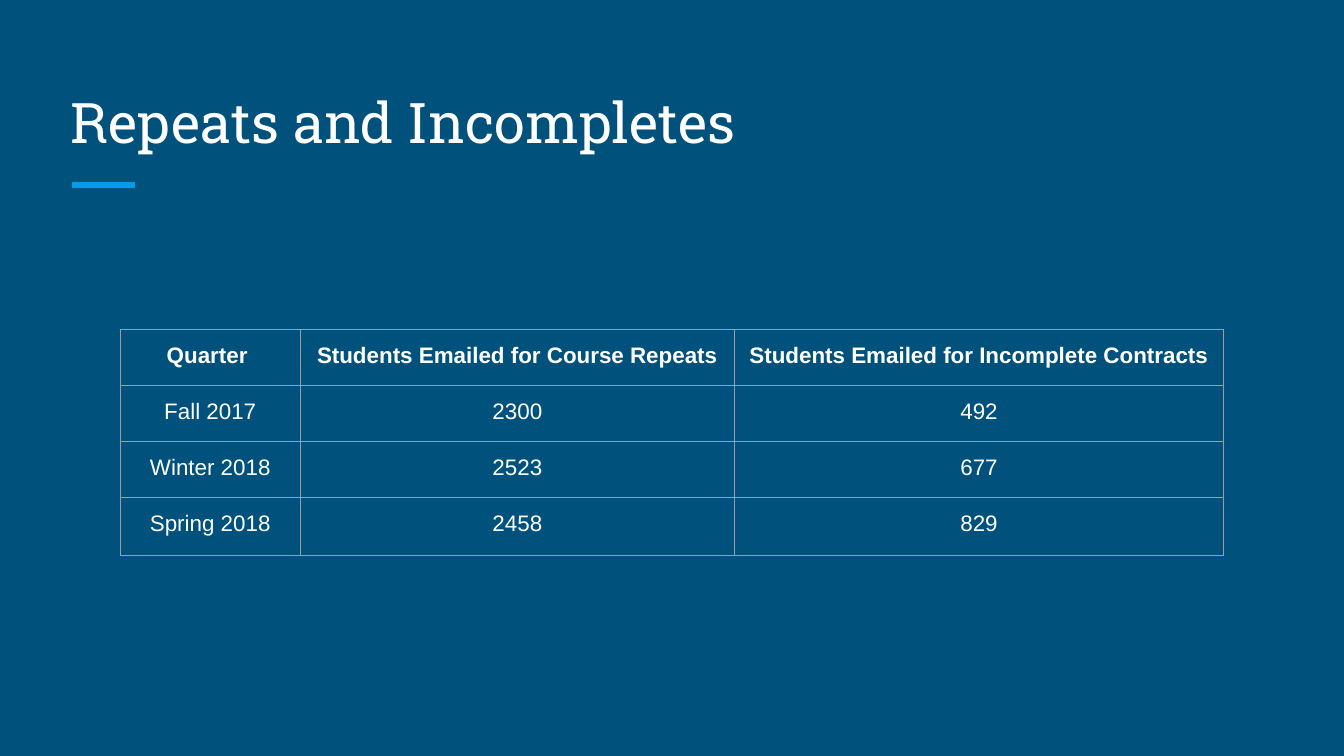
import pptx
import pptx.dml.color
import pptx.enum.shapes
import pptx.enum.text
import pptx.oxml
import pptx.oxml.ns
import pptx.util

WIDTH = 10
HEIGHT = WIDTH * 9 / 16
COLUMNS = 100


def color(value):
    return pptx.dml.color.RGBColor.from_string(value)


def grid(count):
    return pptx.util.Inches(count * WIDTH / COLUMNS)


class SlideBuilder:
    background, white, accent, border = "00517C", "FFFFFF", "039BE5", "9E9E9E"
    title_font, body_font = "Roboto Slab", "Arial"
    inset = 1

    def __init__(self, deck):
        self.slide = deck.slides.add_slide(deck.slide_layouts[5])
        fill = self.slide.background.fill
        fill.solid()
        fill.fore_color.rgb = color(self.background)

    def text(self, frame, words, font, size, align, bold=False):
        para = frame.paragraphs[0]
        para.alignment = align
        span = para.add_run()
        span.text = words
        span.font.name = font
        span.font.size = pptx.util.Pt(size)
        span.font.bold = bold
        span.font.color.rgb = color(self.white)

    def pad(self, target):
        for side in ("left", "right", "top", "bottom"):
            setattr(target, f"margin_{side}", grid(self.inset))

    def title(self, words, left, top, width, height):
        box = self.slide.shapes.title
        box.left, box.top, box.width, box.height = map(grid, (left, top, width, height))
        frame = box.text_frame
        frame.word_wrap = True
        frame.auto_size = pptx.enum.text.MSO_AUTO_SIZE.NONE
        frame.vertical_anchor = pptx.enum.text.MSO_ANCHOR.BOTTOM
        self.pad(frame)
        self.text(frame, words, self.title_font, 30, pptx.enum.text.PP_ALIGN.LEFT)

    def rule(self, left, right, top):
        line = self.slide.shapes.add_connector(
            pptx.enum.shapes.MSO_CONNECTOR.STRAIGHT,
            grid(left), grid(top), grid(right), grid(top))
        line.line.color.rgb = color(self.accent)
        line.line.width = pptx.util.Pt(3)
        properties = line._element.spPr
        properties.append(properties.makeelement(pptx.oxml.ns.qn("a:effectLst"), {}))

    def cell_borders(self, cell):
        properties = cell._tc.get_or_add_tcPr()
        width = pptx.util.Pt(0.75)
        for side in "LRTB":
            properties.append(pptx.oxml.parse_xml(
                f'<a:ln{side} {pptx.oxml.ns.nsdecls("a")} w="{width}"><a:solidFill>'
                f'<a:srgbClr val="{self.border}"/></a:solidFill></a:ln{side}>'))

    def table(self, records, left, top, widths, heights):
        frame = self.slide.shapes.add_table(
            len(records), len(widths), grid(left), grid(top),
            grid(sum(widths)), grid(sum(heights)))
        table = frame.table
        table.first_row = table.horz_banding = False
        for column, width in zip(table.columns, widths):
            column.width = grid(width)
        for row, height in zip(table.rows, heights):
            row.height = grid(height)
        for row_index, record in enumerate(records):
            for column_index, words in enumerate(record):
                cell = table.cell(row_index, column_index)
                self.pad(cell)
                self.cell_borders(cell)
                cell.fill.background()
                self.text(cell.text_frame, words, self.body_font, 12,
                          pptx.enum.text.PP_ALIGN.CENTER, bold=row_index == 0)


def main():
    deck = pptx.Presentation()
    deck.slide_width = pptx.util.Inches(WIDTH)
    deck.slide_height = pptx.util.Inches(HEIGHT)
    page = SlideBuilder(deck)
    page.rule(5.35, 10.03, 13.75)
    page.title("Repeats and Incompletes", 4.25, 5, 91.5, 7.5)
    page.table(
        [("Quarter ", "Students Emailed for Course Repeats",
          "Students Emailed for Incomplete Contracts"),
         ("Fall 2017", "2300", "492"),
         ("Winter 2018", "2523", "677"),
         ("Spring 2018", "2458", "829")],
        8.95, 24.5, (13.4, 32.3, 36.4), (4.17, 4.17, 4.17, 4.3))
    deck.save("out.pptx")


if __name__ == "__main__":
    main()
